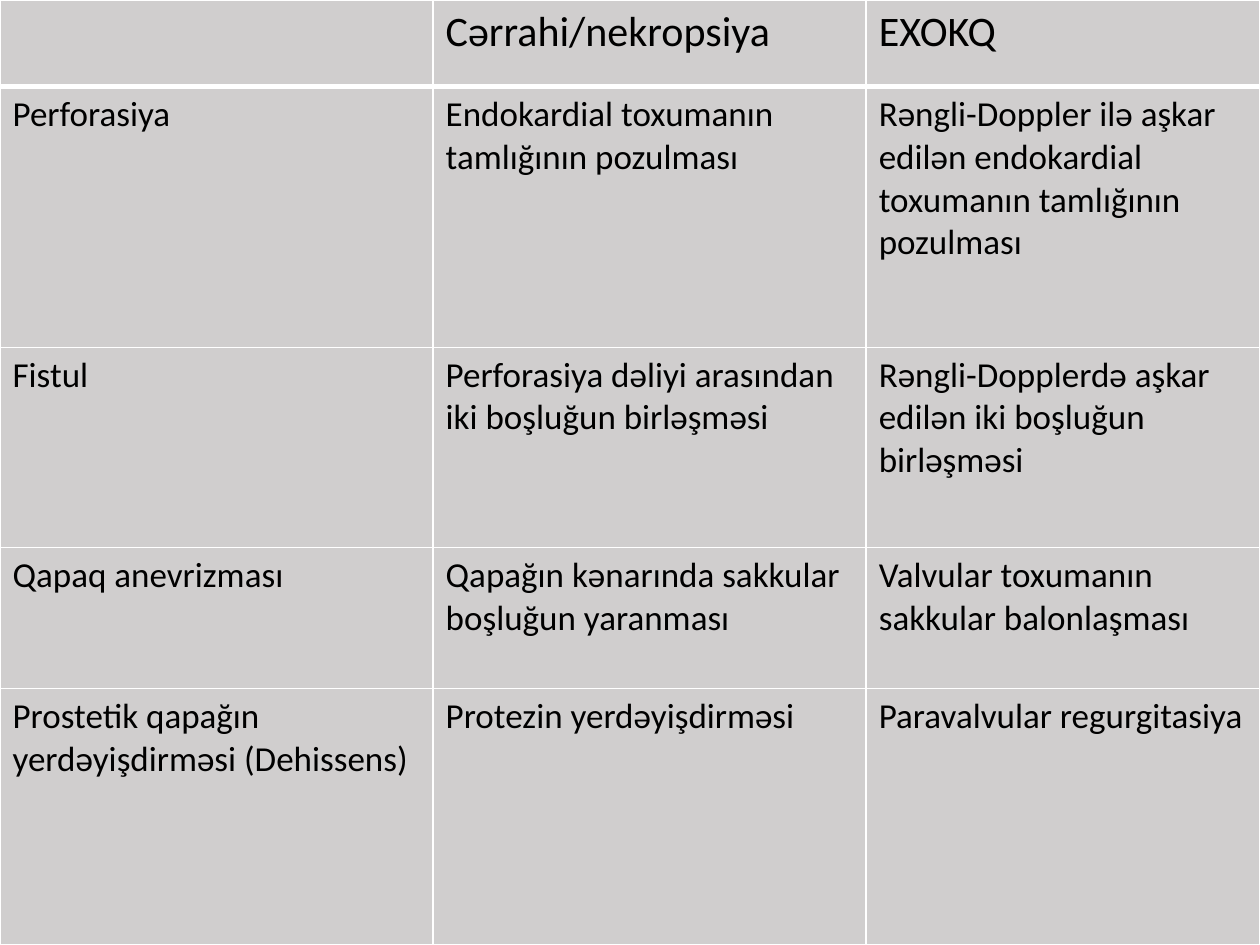
from dataclasses import dataclass

import pptx
import pptx.dml.color
import pptx.oxml
import pptx.oxml.ns
import pptx.table
import pptx.util

Pt = pptx.util.Pt
RGBColor = pptx.dml.color.RGBColor

BLACK = RGBColor(0x00, 0x00, 0x00)
WHITE = RGBColor(0xFF, 0xFF, 0xFF)
GREY = RGBColor(0xD0, 0xCE, 0xCE)
FONT = "Calibri"
COLUMN_WIDTHS = (247.5, 247.5, 225)


@dataclass(frozen=True)
class Row:
    height: float
    texts: tuple[str, str, str]
    size: float = 20
    bottom_line: float = 1


ROWS = (
    Row(49.5, ("", "Cərrahi/nekropsiya", "EXOKQ"), size=24, bottom_line=3),
    Row(149, (
        "Perforasiya",
        "Endokardial toxumanın tamlığının pozulması",
        "Rəngli-Doppler ilə aşkar edilən endokardial toxumanın tamlığının pozulması",
    )),
    Row(114.5, (
        "Fistul",
        "Perforasiya dəliyi arasından iki boşluğun birləşməsi",
        "Rəngli-Dopplerdə aşkar edilən iki boşluğun birləşməsi",
    )),
    Row(80.5, (
        "Qapaq anevrizması",
        "Qapağın kənarında sakkular boşluğun yaranması",
        "Valvular toxumanın sakkular balonlaşması",
    )),
    Row(146.5, (
        "Prostetik qapağın yerdəyişdirməsi (Dehissens)",
        "Protezin yerdəyişdirməsi",
        "Paravalvular regurgitasiya",
    )),
)


def add_borders(cell: pptx.table._Cell, bottom_line: float) -> None:
    """Draw the white cell lines; call before the fill, which must follow them."""
    tc_pr = cell._tc.get_or_add_tcPr()
    for side, width in (("L", 1), ("R", 1), ("T", 1), ("B", bottom_line)):
        tc_pr.append(pptx.oxml.parse_xml(
            f'<a:ln{side} {pptx.oxml.ns.nsdecls("a")} w="{Pt(width)}">'
            f'<a:solidFill><a:srgbClr val="{WHITE}"/></a:solidFill></a:ln{side}>'
        ))


def fill_cell(cell: pptx.table._Cell, text: str, row: Row) -> None:
    add_borders(cell, row.bottom_line)
    cell.fill.solid()
    cell.fill.fore_color.rgb = GREY
    p = cell.text_frame.paragraphs[0]
    p.text = text
    p.font.size = Pt(row.size)
    for r in p.runs:
        r.font.name = FONT
        r.font.size = Pt(row.size)
        r.font.bold = False
        r.font.color.rgb = BLACK


def main() -> None:
    prs = pptx.Presentation()
    prs.slide_width, prs.slide_height = Pt(720), Pt(540)
    s = prs.slides.add_slide(prs.slide_layouts[6])
    table = s.shapes.add_table(
        len(ROWS), len(COLUMN_WIDTHS), Pt(0), Pt(0), prs.slide_width, prs.slide_height
    ).table
    table.horz_banding = False
    for column, width in zip(table.columns, COLUMN_WIDTHS):
        column.width = Pt(width)
    for table_row, row in zip(table.rows, ROWS):
        table_row.height = Pt(row.height)
        for cell, text in zip(table_row.cells, row.texts):
            fill_cell(cell, text, row)
    prs.save("out.pptx")


if __name__ == "__main__":
    main()
